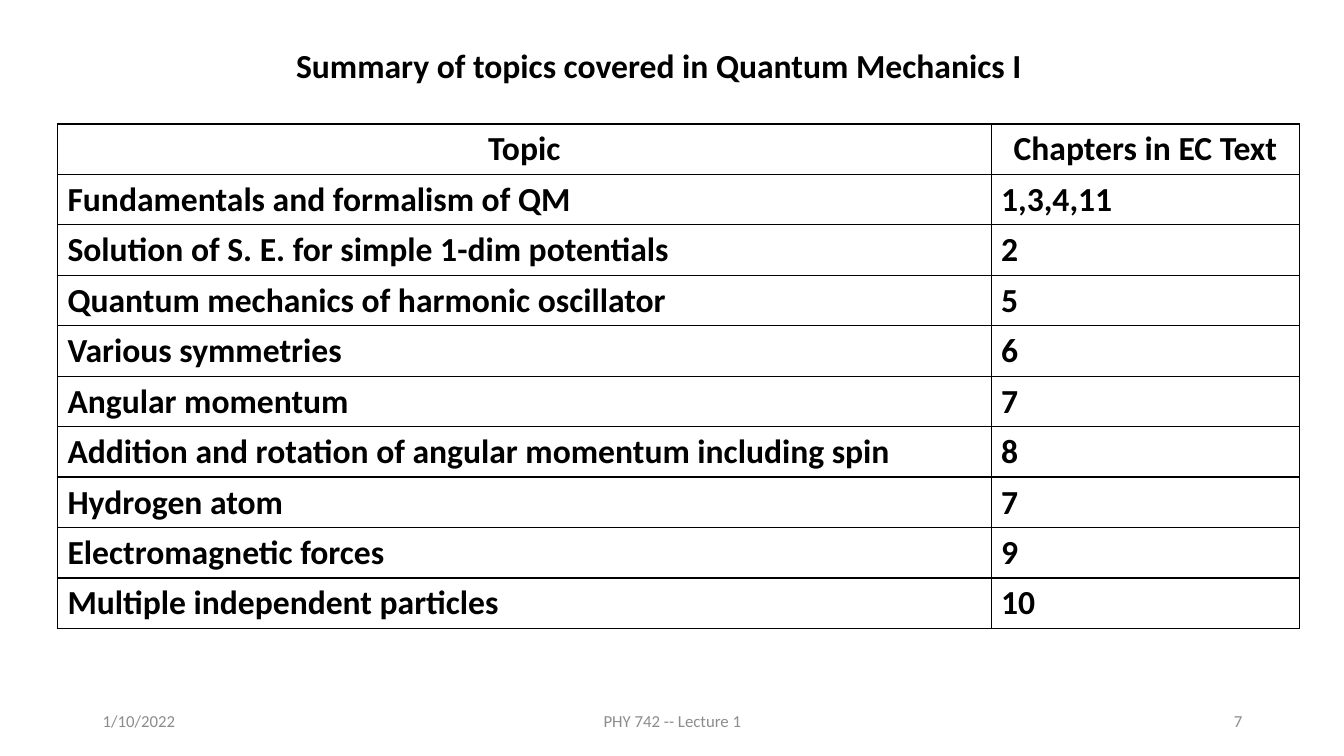
from dataclasses import dataclass

from lxml.etree import SubElement
from pptx import Presentation
from pptx.dml.color import RGBColor
from pptx.enum.text import MSO_ANCHOR as Anchor, MSO_AUTO_SIZE as AutoSize, PP_ALIGN as Align
from pptx.oxml.ns import qn
from pptx.util import Emu, Pt

PX = 9144


@dataclass(frozen=True)
class Theme:
    font: str = "Calibri"
    ink: str = "000000"
    muted: str = "8C8C8C"
    paper: str = "FFFFFF"
    main_size: int = 24
    footer_size: int = 12
    border_width: int = 1


THEME = Theme()

TITLE = "Summary of topics covered in Quantum Mechanics I"
HEADINGS = ("Topic", "Chapters in EC Text")
TOPICS = [
    ("Fundamentals and formalism of QM", "1,3,4,11"),
    ("Solution of S. E. for simple 1-dim potentials", "2"),
    ("Quantum mechanics of harmonic oscillator", "5"),
    ("Various symmetries", "6"),
    ("Angular momentum", "7"),
    ("Addition and rotation of angular momentum including spin", "8"),
    ("Hydrogen atom", "7"),
    ("Electromagnetic forces", "9"),
    ("Multiple independent particles", "10"),
]
FOOTERS = [
    ("1/10/2022", 92, 300, Align.LEFT),
    ("PHY 742 -- Lecture 1", 442, 450, Align.CENTER),
    ("7", 942, 300, Align.RIGHT),
]


def px(*lengths):
    return [Emu(length * PX) for length in lengths]


def write(frame, text, size, color, align, bold=False):
    frame.text = text
    para = frame.paragraphs[0]
    para.alignment = align
    para.font.name = THEME.font
    para.font.size = Pt(size)
    para.font.bold = bold
    para.font.color.rgb = RGBColor.from_string(color)


def write_main(frame, text, align):
    write(frame, text, THEME.main_size, THEME.ink, align, bold=True)


def add_title(page):
    title = page.shapes.title
    title.left, title.top, title.width, title.height = px(122, 40, 1063, 50)
    frame = title.text_frame
    write_main(frame, TITLE, Align.CENTER)
    frame.word_wrap = True
    frame.auto_size = AutoSize.SHAPE_TO_FIT_TEXT
    frame.vertical_anchor = Anchor.TOP


def add_footer(page, text, left, width, align):
    box = page.shapes.add_textbox(*px(left, 695, width, 40))
    frame = box.text_frame
    frame.word_wrap = True
    frame.vertical_anchor = Anchor.MIDDLE
    write(frame, text, THEME.footer_size, THEME.muted, align)


def add_borders(cell):
    properties = cell._tc.get_or_add_tcPr()
    for side in ("lnL", "lnR", "lnT", "lnB"):
        line = SubElement(properties, qn(f"a:{side}"), w=str(Pt(THEME.border_width)))
        fill = SubElement(line, qn("a:solidFill"))
        SubElement(fill, qn("a:srgbClr"), val=THEME.ink)


def add_topic_table(page):
    rows = [HEADINGS, *TOPICS]
    widths = px(926, 306)
    frame = page.shapes.add_table(len(rows), len(widths), *px(57, 123, 1232, 500))
    table = frame.table
    table.first_row = table.horz_banding = False
    for column, width in zip(table.columns, widths):
        column.width = width
    for row_index, row in enumerate(rows):
        align = Align.LEFT if row_index else Align.CENTER
        for column_index, text in enumerate(row):
            cell = table.cell(row_index, column_index)
            add_borders(cell)
            cell.fill.background()
            write_main(cell.text_frame, text, align)


def main():
    deck = Presentation()
    deck.slide_width, deck.slide_height = px(1333, 750)
    page = deck.slides.add_slide(deck.slide_layouts.get_by_name("Title Only"))
    page.background.fill.solid()
    page.background.fill.fore_color.rgb = RGBColor.from_string(THEME.paper)
    for footer in FOOTERS:
        add_footer(page, *footer)
    add_title(page)
    add_topic_table(page)
    deck.save("out.pptx")


if __name__ == "__main__":
    main()
